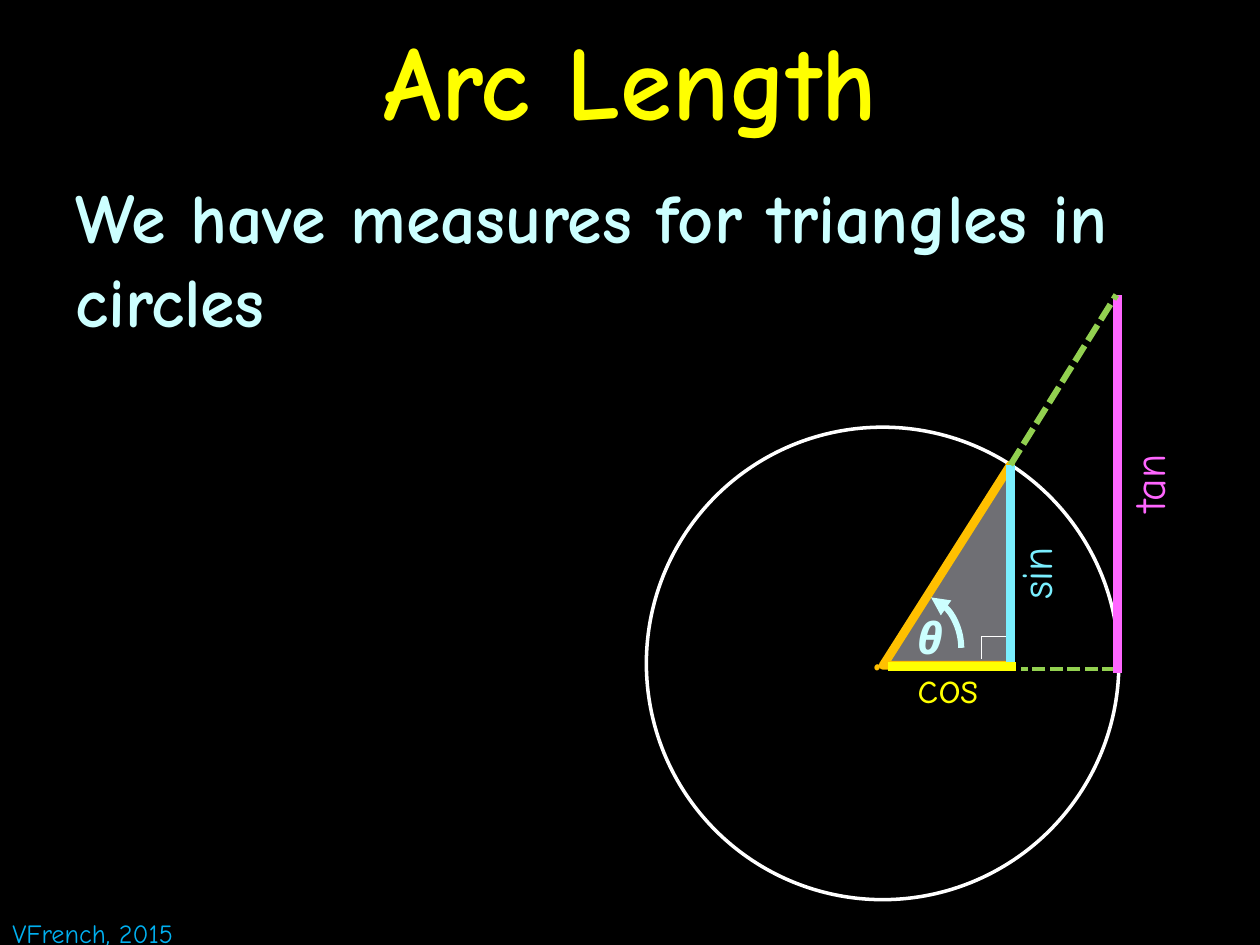
"""Build the Arc Length slide: sine, cosine and tangent in a circle."""
from lxml.etree import SubElement
from pptx import Presentation
from pptx.dml.color import RGBColor
from pptx.enum.dml import MSO_LINE
from pptx.enum.shapes import MSO_CONNECTOR, MSO_SHAPE
from pptx.enum.text import MSO_ANCHOR, PP_ALIGN
from pptx.oxml.ns import qn
from pptx.util import Inches, Pt

FONT = "Comic Neue"
BLACK = RGBColor(0x00, 0x00, 0x00)
WHITE = RGBColor(0xFF, 0xFF, 0xFF)
YELLOW = RGBColor(0xFF, 0xFF, 0x00)
ICE = RGBColor(0xCC, 0xFF, 0xFF)
ORANGE = RGBColor(0xFF, 0xC0, 0x00)
GRAY = RGBColor(0x6F, 0x6F, 0x74)
CYAN = RGBColor(0x7A, 0xEE, 0xFE)
GREEN = RGBColor(0x92, 0xD0, 0x50)
PINK = RGBColor(0xFF, 0x66, 0xFF)
BLUE = RGBColor(0x00, 0xB0, 0xF0)

TITLE = "Arc Length"
STATEMENT = "We have measures for triangles in circles"
CREDIT = "VFrench, 2015"

CIRCLE = (5.13, 3.39, 3.75, 3.75)
TRIANGLE = (7.01, 3.69, 1.01, 1.59)
ANGLE_ARC = (6.93, 4.72, 0.7, 0.86)
ARC_ADJUSTMENTS = (171.07, 215.22)

ARC_POINT = (8.02, 3.69)
CORNER = (7.79, 5.05)
RIGHT_ANGLE = [
    ((8.02, 5.05), CORNER, WHITE, 0.75, None),
    (CORNER, (7.79, 5.23), WHITE, 0.75, None),
]
MEASURES = [
    (ARC_POINT, (8.02, 5.27), CYAN, 5, None),
    ((8.85, 5.31), (8.1, 5.31), GREEN, 2.5, MSO_LINE.SQUARE_DOT),
    ((8.87, 5.34), (8.87, 2.34), PINK, 5, None),
    (ARC_POINT, (8.86, 2.34), GREEN, 3.5, MSO_LINE.SQUARE_DOT),
    ((8.06, 5.29), (7.05, 5.29), YELLOW, 5, None),
]
MEASURE_LABELS = [
    ("sin", (7.89, 4.27, 0.65, 0.52), CYAN, 270),
    ("cos", (7.18, 5.19, 0.74, 0.52), YELLOW, 0),
    ("tan", (8.75, 3.54, 0.73, 0.52), PINK, 270),
]


def style(paragraph, size, color, bold=False, italic=False):
    font = paragraph.font
    font.name, font.size = FONT, Pt(size)
    font.bold, font.italic = bold, italic
    font.color.rgb = color


def add_text(slide, text, box, size, color, bold=False, italic=False, wrap=False, rotation=0):
    label = slide.shapes.add_textbox(*map(Inches, box))
    label.rotation = rotation
    label.text_frame.word_wrap = wrap
    label.text_frame.text = text
    style(label.text_frame.paragraphs[0], size, color, bold, italic)


def add_outline(slide, preset, box, color, width, fill=None):
    outline = slide.shapes.add_shape(preset, *map(Inches, box))
    outline.shadow.inherit = False
    outline.line.color.rgb = color
    outline.line.width = Pt(width)
    if fill is None:
        outline.fill.background()
    else:
        outline.fill.solid()
        outline.fill.fore_color.rgb = fill
    return outline


def add_lines(slide, segments):
    for start, end, color, width, dash in segments:
        segment = slide.shapes.add_connector(
            MSO_CONNECTOR.STRAIGHT, *map(Inches, start + end))
        segment.line.color.rgb = color
        segment.line.width = Pt(width)
        if dash:
            segment.line.dash_style = dash
        SubElement(segment._element.spPr, qn("a:effectLst"))


def add_title(slide):
    title = slide.shapes.title
    title.left, title.top, title.width, title.height = map(Inches, (0, 0, 10, 1.25))
    title.text_frame.text = TITLE
    title.text_frame.vertical_anchor = MSO_ANCHOR.MIDDLE
    heading = title.text_frame.paragraphs[0]
    heading.alignment = PP_ALIGN.CENTER
    style(heading, 60, YELLOW, bold=True)


def add_diagram(slide):
    add_outline(slide, MSO_SHAPE.OVAL, CIRCLE, WHITE, 2)
    add_text(slide, ".", (6.83, 4.72, 0.34, 0.77), 40, ORANGE)
    triangle = add_outline(slide, MSO_SHAPE.RIGHT_TRIANGLE, TRIANGLE, ORANGE, 5, GRAY)
    triangle._element.spPr.xfrm.set("flipH", "1")
    add_lines(slide, RIGHT_ANGLE)
    add_text(slide, "θ", (7.18, 4.8, 0.5, 0.52), 25, ICE, bold=True, italic=True, wrap=True)
    arc = add_outline(slide, MSO_SHAPE.ARC, ANGLE_ARC, ICE, 3.5)
    for index, angle in enumerate(ARC_ADJUSTMENTS):
        arc.adjustments[index] = angle
    SubElement(arc.line._get_or_add_ln(), qn("a:headEnd"), type="triangle")
    add_lines(slide, MEASURES)
    for text, box, color, rotation in MEASURE_LABELS:
        add_text(slide, text, box, 25, color, rotation=rotation)


def main():
    presentation = Presentation()
    presentation.slide_width, presentation.slide_height = Inches(10), Inches(7.5)
    slide = presentation.slides.add_slide(presentation.slide_layouts[5])
    slide.background.fill.solid()
    slide.background.fill.fore_color.rgb = BLACK
    add_title(slide)
    add_text(slide, STATEMENT, (0.5, 1.33, 9, 6.17), 40, ICE, bold=True, wrap=True)
    add_diagram(slide)
    add_text(slide, CREDIT, (0, 7.23, 1.69, 0.35), 15, BLUE)
    presentation.save("out.pptx")


if __name__ == "__main__":
    main()
